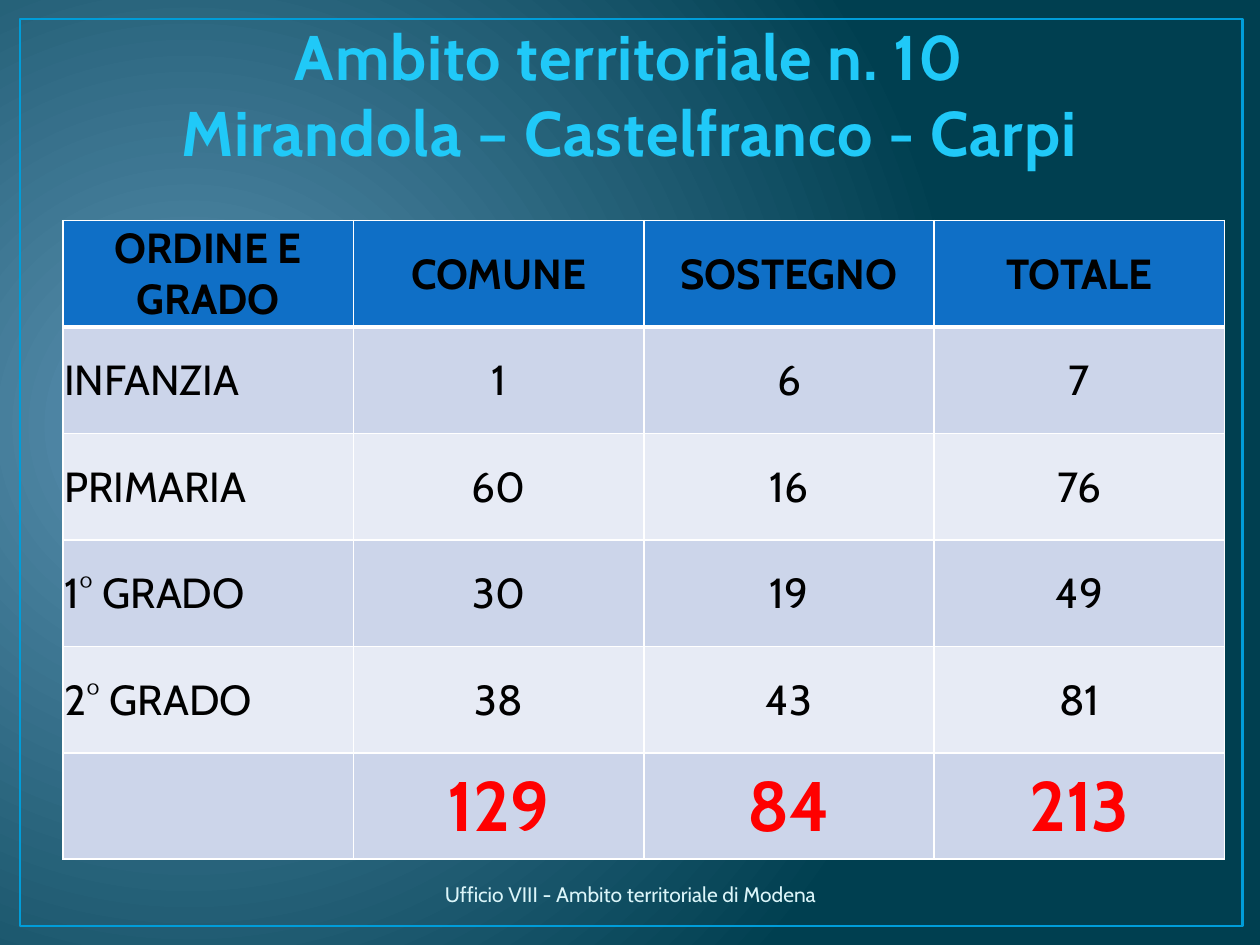
from lxml import etree
from pptx import Presentation
from pptx import util as u
from pptx.dml.color import RGBColor
from pptx.enum import shapes, text
from pptx.oxml.ns import qn

SKY = RGBColor(0x5C, 0x92, 0xB3)
DEEP = RGBColor(0x00, 0x3F, 0x50)
FRAME = RGBColor(0x00, 0x9D, 0xD9)
CYAN = RGBColor(0x20, 0xC9, 0xF8)
PALE = RGBColor(0xDB, 0xF5, 0xF9)
BLUE = RGBColor(0x0F, 0x6F, 0xC6)
BAND = RGBColor(0xCC, 0xD5, 0xEA)
LIGHT = RGBColor(0xE7, 0xEB, 0xF5)
BLACK = RGBColor(0, 0, 0)
RED = RGBColor(0xFF, 0, 0)
WHITE = RGBColor(0xFF, 0xFF, 0xFF)

COLUMNS, ROWS = 100, 75
CENTER, LEFT = text.PP_ALIGN.CENTER, text.PP_ALIGN.LEFT
MIDDLE, BOTTOM = text.MSO_ANCHOR.MIDDLE, text.MSO_ANCHOR.BOTTOM

TITLE = {"size": u.Pt(36), "bold": True, "color": CYAN}
HEADER = {"size": u.Pt(24), "bold": True, "color": BLACK}
BODY = {"size": u.Pt(24), "bold": False, "color": BLACK}
TOTAL = {"size": u.Pt(40), "bold": True, "color": RED}
FOOTER = {"size": u.Pt(12), "bold": False, "color": PALE}

DATA = [
    ["ORDINE E GRADO", "COMUNE", "SOSTEGNO", "TOTALE"],
    ["INFANZIA", "1", "6", "7"],
    ["PRIMARIA", "60", "16", "76"],
    ["1° GRADO", "30", "19", "49"],
    ["2° GRADO", "38", "43", "81"],
    ["", "129", "84", "213"],
]


class Deck:
    font = "Cabin"

    def __init__(self, prs):
        self.col = prs.slide_width / COLUMNS
        self.row = prs.slide_height / ROWS
        self.s = prs.slides.add_slide(prs.slide_layouts[6])

    def box(self, x, y, w, h):
        return [int(v) for v in (x * self.col, y * self.row, w * self.col, h * self.row)]

    def background(self, inner, outer, focus):
        fill = self.s.background.fill
        fill.gradient()
        for stop, color in zip(fill.gradient_stops, (inner, outer)):
            stop.color.rgb = color
        grad = next(self.s.element.iter(qn("a:gradFill")))
        grad.remove(grad.find(qn("a:lin")))
        circle = etree.SubElement(grad, qn("a:path"), path="circle")
        sides = {side: str(share * 1000) for side, share in focus.items()}
        etree.SubElement(circle, qn("a:fillToRect"), sides)

    def frame(self, place, color, width):
        sp = self.s.shapes.add_shape(shapes.MSO_SHAPE.RECTANGLE, *self.box(*place))
        sp.shadow.inherit = False
        sp.fill.background()
        sp.line.color.rgb = color
        sp.line.width = u.Pt(width)

    def run(self, p, line, style, spacing=0):
        r = p.add_run()
        r.text = line
        r.font.name = self.font
        for key, value in style.items():
            if key == "color":
                r.font.color.rgb = value
            else:
                setattr(r.font, key, value)
        if spacing:
            r.font._element.set("spc", str(int(spacing * 100)))

    def text(self, place, lines, style, anchor, spacing=0):
        tf = self.s.shapes.add_textbox(*self.box(*place)).text_frame
        tf.word_wrap = True
        tf.vertical_anchor = anchor
        p = tf.paragraphs[0]
        p.alignment = CENTER
        for i, line in enumerate(lines):
            if i:
                p.add_line_break()
            self.run(p, line, style, spacing)

    def border(self, cell, widths):
        tcPr = cell._tc.get_or_add_tcPr()
        for side, width in widths.items():
            ln = etree.SubElement(tcPr, qn("a:ln" + side), w=str(u.Pt(width)))
            fill = etree.SubElement(ln, qn("a:solidFill"))
            etree.SubElement(fill, qn("a:srgbClr"), val=str(WHITE))

    def table(self, place, data):
        last = len(data) - 1
        margins = dict.fromkeys(("margin_left", "margin_right", "margin_top"), u.Inches(0.01))
        layout = {**margins, "margin_bottom": 0, "vertical_anchor": MIDDLE}
        table = self.s.shapes.add_table(len(data), len(data[0]), *self.box(*place)).table
        for i, values in enumerate(data):
            style = HEADER if i == 0 else TOTAL if i == last else BODY
            color = BLUE if i == 0 else BAND if i % 2 else LIGHT
            widths = {"L": 1, "R": 1, "T": 3 if i == 1 else 1, "B": 3 if i == 0 else 1}
            for j, value in enumerate(values):
                cell = table.cell(i, j)
                for key, setting in layout.items():
                    setattr(cell, key, setting)
                self.border(cell, widths)
                cell.fill.solid()
                cell.fill.fore_color.rgb = color
                p = cell.text_frame.paragraphs[0]
                p.alignment = LEFT if i and not j else CENTER
                if value:
                    self.run(p, value, style)


def main():
    prs = Presentation()
    prs.slide_width, prs.slide_height = u.Inches(10), u.Inches(7.5)
    deck = Deck(prs)
    deck.background(SKY, DEEP, {"l": 15, "t": 50, "r": 85, "b": 60})
    deck.frame((1.6, 1.5, 97, 72), FRAME, 1.5)
    title = ["Ambito territoriale n. 10", "Mirandola – Castelfranco - Carpi"]
    deck.text((5, 1.3, 90, 12.6), title, TITLE, BOTTOM, 0.5)
    deck.table((5, 17.5, 92.2, 50.7), DATA)
    footer = ["Ufficio VIII - Ambito territoriale di Modena"]
    deck.text((31, 69, 38.1, 4), footer, FOOTER, MIDDLE)
    prs.save("out.pptx")


if __name__ == "__main__":
    main()
